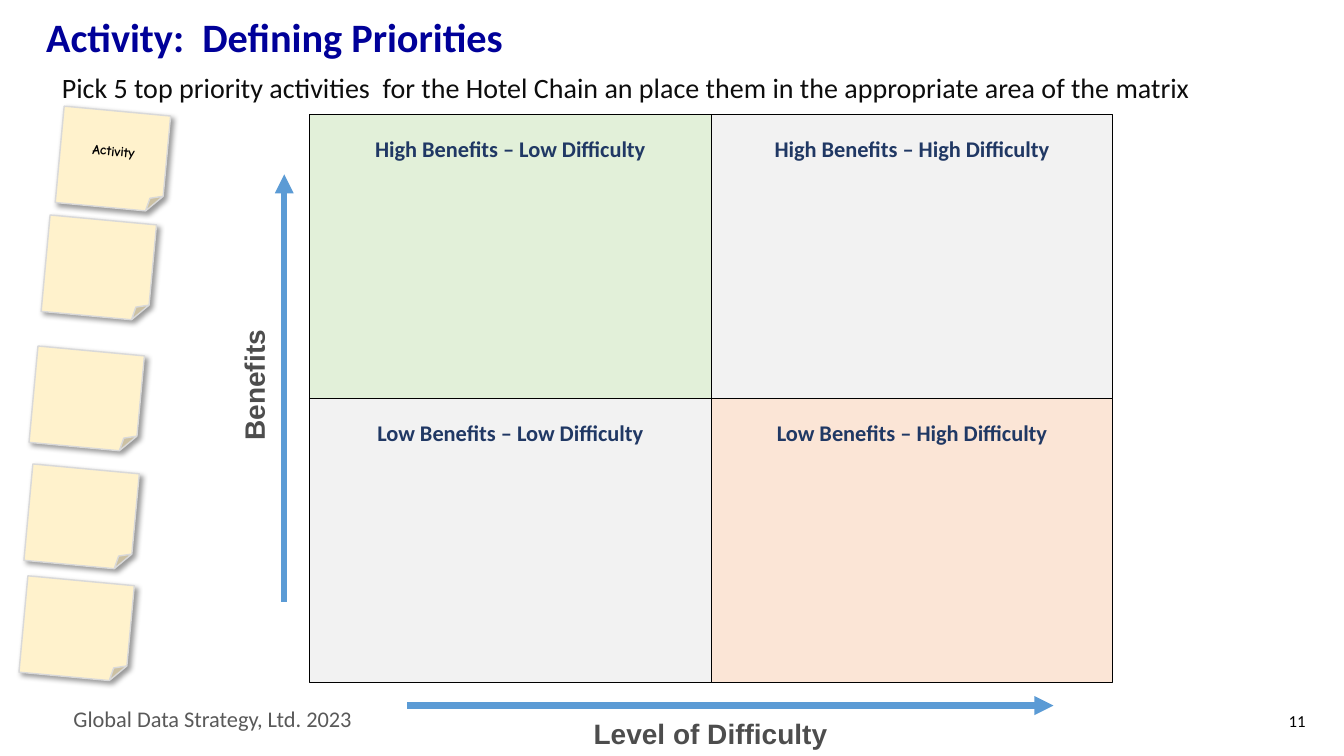
from dataclasses import dataclass

from lxml.etree import SubElement
from pptx import Presentation
from pptx.dml.color import RGBColor
from pptx.enum.shapes import MSO_CONNECTOR as Connector, MSO_SHAPE as Shape
from pptx.enum.text import MSO_ANCHOR as Anchor, PP_ALIGN as Align
from pptx.oxml.ns import qn
from pptx.util import Inches, Pt

SLIDE_WIDTH, SLIDE_HEIGHT = Inches(13.33), Inches(7.5)


@dataclass(frozen=True)
class TextStyle:
    size: float
    color: str
    bold: bool = False
    font: str = "Calibri"


class Theme:
    title = TextStyle(28.8, "000099", True)
    instruction = TextStyle(20, "0D0D0D")
    quadrant = TextStyle(16, "203864", True)
    axis = TextStyle(20, "4D4D4D", True, "Arial")
    note = TextStyle(10, "000000", True, "Comic Neue")
    footer = TextStyle(16, "595959")
    page_number = TextStyle(12, "000000")
    border, arrow = "000000", "5B9BD5"
    best, neutral, worst = "E2F0D9", "F2F2F2", "FBE5D6"
    note_fill, note_border, note_shadow = "FFF2CC", "D9D9D9", "000000"


# Lengths below are percentages of the slide's width and height.
MATRIX_LEFT, MATRIX_TOP = 23.03, 15.2
QUADRANT_WIDTH, QUADRANT_HEIGHT = 29.89, 37.53
QUADRANTS = (
    (("High Benefits – Low Difficulty", Theme.best),
     ("High Benefits – High Difficulty", Theme.neutral)),
    (("Low Benefits – Low Difficulty", Theme.neutral),
     ("Low Benefits – High Difficulty", Theme.worst)),
)
NOTE_WIDTH, NOTE_HEIGHT, NOTE_TILT = 7.95, 12.8, 5.3
NOTES = (
    (4.43, 14.67, "Activity"),
    (3.38, 29.07, ""),
    (2.48, 46.4, ""),
    (2.1, 62, ""),
    (1.73, 76.8, ""),
)


def across(percent):
    return round(SLIDE_WIDTH * percent / 100)


def down(percent):
    return round(SLIDE_HEIGHT * percent / 100)


def area(left, top, width, height):
    return across(left), down(top), across(width), down(height)


def write(shape, text, style, align=Align.LEFT, anchor=Anchor.TOP,
          wrap=True, line_spacing=None, insets=(7.2, 3.6, 7.2, 3.6)):
    """Put one styled run in the shape; insets are left, top, right, bottom in points."""
    frame = shape.text_frame
    frame.word_wrap = wrap
    frame.vertical_anchor = anchor
    (frame.margin_left, frame.margin_top,
     frame.margin_right, frame.margin_bottom) = map(Pt, insets)
    paragraph = frame.paragraphs[0]
    paragraph.alignment = align
    if line_spacing:
        paragraph.line_spacing = line_spacing
    run = paragraph.add_run()
    run.text = text
    run.font.name = style.font
    run.font.size = Pt(style.size)
    run.font.bold = style.bold
    run.font.color.rgb = RGBColor.from_string(style.color)


def add_label(slide, place, text, style, rotation=0, **layout):
    label = slide.shapes.add_textbox(*area(*place))
    label.rotation = rotation
    write(label, text, style, **layout)


def add_filled_shape(slide, kind, place, fill, border, border_width):
    shape = slide.shapes.add_shape(kind, *area(*place))
    shape.shadow.inherit = False
    shape.fill.solid()
    shape.fill.fore_color.rgb = RGBColor.from_string(fill)
    shape.line.color.rgb = RGBColor.from_string(border)
    shape.line.width = Pt(border_width)
    return shape


def add_matrix(slide):
    for row, quadrants in enumerate(QUADRANTS):
        for column, (heading, fill) in enumerate(quadrants):
            place = (MATRIX_LEFT + column * QUADRANT_WIDTH,
                     MATRIX_TOP + row * QUADRANT_HEIGHT,
                     QUADRANT_WIDTH, QUADRANT_HEIGHT)
            quadrant = add_filled_shape(
                slide, Shape.RECTANGLE, place, fill, Theme.border, 0.75)
            write(quadrant, heading, Theme.quadrant, Align.CENTER,
                  wrap=False, insets=(7.2, 14.4, 7.2, 3.6))


def add_arrow(slide, start, end):
    arrow = slide.shapes.add_connector(
        Connector.STRAIGHT, across(start[0]), down(start[1]),
        across(end[0]), down(end[1]))
    arrow.line.color.rgb = RGBColor.from_string(Theme.arrow)
    arrow.line.width = Pt(4.5)
    SubElement(arrow.line._get_or_add_ln(), qn("a:tailEnd"), type="triangle")
    SubElement(arrow._element.spPr, qn("a:effectLst"))


def cast_shadow(shape):
    """Add a soft shadow towards the lower right."""
    effects = shape._element.spPr.find(qn("a:effectLst"))
    shadow = SubElement(effects, qn("a:outerShdw"), blurRad=str(Pt(4)),
                        dist=str(Pt(3)), dir=str(45 * 60000),
                        algn="tl", rotWithShape="0")
    color = SubElement(shadow, qn("a:srgbClr"), val=Theme.note_shadow)
    SubElement(color, qn("a:alpha"), val="40000")


def add_note(slide, left, top, text):
    note = add_filled_shape(
        slide, Shape.FOLDED_CORNER, (left, top, NOTE_WIDTH, NOTE_HEIGHT),
        Theme.note_fill, Theme.note_border, 1)
    note.rotation = NOTE_TILT
    cast_shadow(note)
    if text:
        write(note, text, Theme.note, Align.CENTER, Anchor.MIDDLE,
              insets=(3.6, 3.6, 3.6, 4.3))


def main():
    presentation = Presentation()
    presentation.slide_width, presentation.slide_height = SLIDE_WIDTH, SLIDE_HEIGHT
    slide = presentation.slides.add_slide(presentation.slide_layouts[6])

    add_label(slide, (4.73, 92.67, 27.15, 4.93),
              "Global Data Strategy, Ltd. 2023", Theme.footer)
    add_label(slide, (2.7, 1.6, 83.4, 7.2), "Activity:  Defining Priorities",
              Theme.title, anchor=Anchor.BOTTOM, line_spacing=0.9)
    add_matrix(slide)
    add_label(slide, (43.43, 94.13, 19.05, 5.87), "Level of Difficulty",
              Theme.axis, wrap=False)
    add_label(slide, (11.33, 43.33, 15.08, 5.73), "Benefits",
              Theme.axis, rotation=270)
    add_label(slide, (93.15, 92.67, 4.73, 5.33), "11", Theme.page_number,
              align=Align.RIGHT, anchor=Anchor.MIDDLE)
    add_arrow(slide, (21.15, 79.6), (21.15, 23.07))
    add_arrow(slide, (30.3, 93.33), (78.38, 93.33))
    add_label(slide, (0, 9.2, 93.15, 7.87),
              "Pick 5 top priority activities  for the Hotel Chain an place them "
              "in the appropriate area of the matrix",
              Theme.instruction, align=Align.CENTER, line_spacing=0.9)
    for left, top, text in NOTES:
        add_note(slide, left, top, text)

    presentation.save("out.pptx")


if __name__ == "__main__":
    main()
